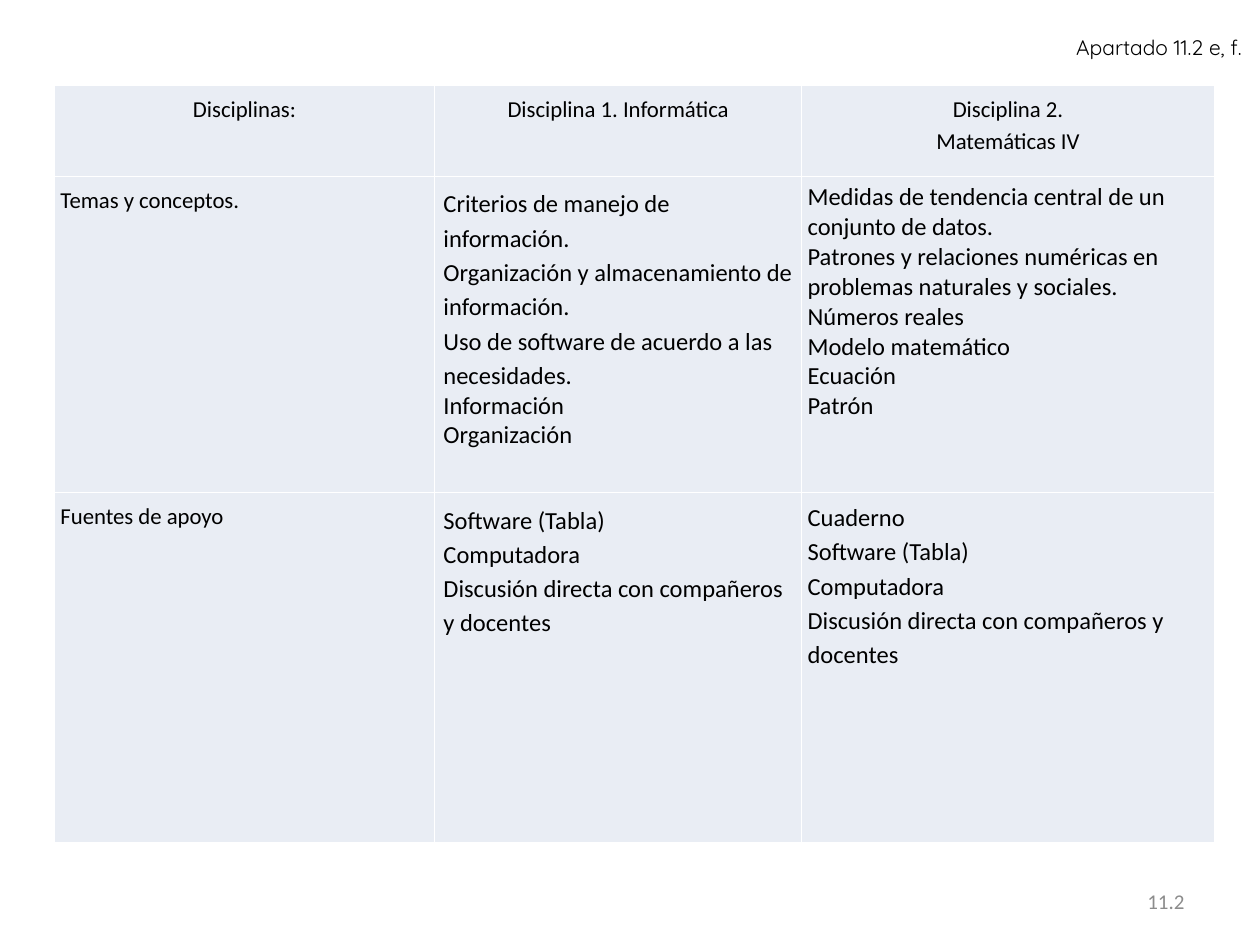
from lxml.etree import SubElement
from pptx import Presentation
from pptx.dml.color import RGBColor
from pptx.enum.text import MSO_ANCHOR, PP_ALIGN
from pptx.oxml.ns import qn
from pptx.util import Inches, Pt

COLORS = {"text": "000000", "number": "8C8C8C", "cell": "E9EDF4", "border": "FFFFFF"}
WIDE = 1.15

presentation = Presentation()
presentation.slide_width, presentation.slide_height = Inches(10), Inches(7.5)
WIDTH, HEIGHT = presentation.slide_width, presentation.slide_height
slide = presentation.slides.add_slide(presentation.slide_layouts[6])


def write(paragraph, text, size, align, color="text", font="Calibri", spacing=1.0):
    paragraph.alignment = align
    paragraph.line_spacing = spacing
    run = paragraph.add_run()
    run.text = text
    run.font.size = Pt(size)
    run.font.name = font
    run.font.color.rgb = RGBColor.from_string(COLORS[color])


# Table content: each cell is a list of (text, line spacing)
header = [
    [("Disciplinas:", WIDE)],
    [("Disciplina 1. Informática", WIDE)],
    [("Disciplina 2.", WIDE), ("Matemáticas IV", WIDE)],
]
topics = [
    [("Temas y conceptos.", WIDE)],
    [
        ("Criterios de manejo de información.", WIDE),
        ("Organización y almacenamiento de información.", WIDE),
        ("Uso de software de acuerdo a las necesidades.", WIDE),
        ("Información", 1.0),
        ("Organización", 1.0),
    ],
    [
        ("Medidas de tendencia central de un conjunto de datos.", 1.0),
        ("Patrones y relaciones numéricas en problemas naturales y sociales.", 1.0),
        ("Números reales", 1.0),
        ("Modelo matemático", 1.0),
        ("Ecuación", 1.0),
        ("Patrón", 1.0),
    ],
]
shared_sources = [
    ("Software (Tabla)", WIDE),
    ("Computadora", WIDE),
    ("Discusión directa con compañeros y docentes", WIDE),
]
sources = [
    [("Fuentes de apoyo", WIDE)],
    shared_sources,
    [("Cuaderno", WIDE)] + shared_sources,
]
rows = [header, topics, sources]
column_widths = [3.02, 2.91, 3.28]
row_heights = [0.72, 2.51, 2.78]

# Table grid
table = slide.shapes.add_table(
    len(rows), len(column_widths), Inches(0.43), Inches(0.68),
    Inches(sum(column_widths)), Inches(sum(row_heights)),
).table
for column, width in zip(table.columns, column_widths):
    column.width = Inches(width)
for row, height in zip(table.rows, row_heights):
    row.height = Inches(height)
table.first_row = table.horz_banding = False

# Cells
for row_index, row in enumerate(rows):
    for column_index, lines in enumerate(row):
        cell = table.cell(row_index, column_index)
        is_header, is_label = row_index == 0, column_index == 0
        inset = Inches(0.07 if column_index == 1 and not is_header else 0.05)
        cell.margin_left = cell.margin_right = inset
        cell.margin_top = cell.margin_bottom = inset

        # Borders come before the fill in the cell properties
        properties = cell._tc.get_or_add_tcPr()
        for side in ("lnL", "lnR", "lnT", "lnB"):
            line = SubElement(properties, qn(f"a:{side}"), w=str(Pt(1)))
            line_fill = SubElement(line, qn("a:solidFill"))
            SubElement(line_fill, qn("a:srgbClr"), val=COLORS["border"])
        cell.fill.solid()
        cell.fill.fore_color.rgb = RGBColor.from_string(COLORS["cell"])

        frame = cell.text_frame
        size = 13 if is_header or is_label else 14
        align = PP_ALIGN.CENTER if is_header else PP_ALIGN.LEFT
        if row_index == 1 and is_label:
            align = PP_ALIGN.JUSTIFY
        for index, (text, spacing) in enumerate(lines):
            paragraph = frame.add_paragraph() if index else frame.paragraphs[0]
            write(paragraph, text, size, align, spacing=spacing)

# Section label at the top and number at the bottom, as shares of the slide
labels = [
    ("Apartado 11.2 e, f. ", "Quicksand", "text", MSO_ANCHOR.TOP,
     (0.195, 0.03, 0.805, 0.04)),
    ("11.2", "Calibri", "number", MSO_ANCHOR.MIDDLE,
     (0.717, 0.927, 0.233, 0.053)),
]
for text, font, color, anchor, (left, top, width, height) in labels:
    box = slide.shapes.add_textbox(
        int(left * WIDTH), int(top * HEIGHT), int(width * WIDTH), int(height * HEIGHT)
    )
    frame = box.text_frame
    frame.word_wrap = True
    frame.vertical_anchor = anchor
    write(frame.paragraphs[0], text, 12, PP_ALIGN.RIGHT, color, font)

presentation.save("out.pptx")
